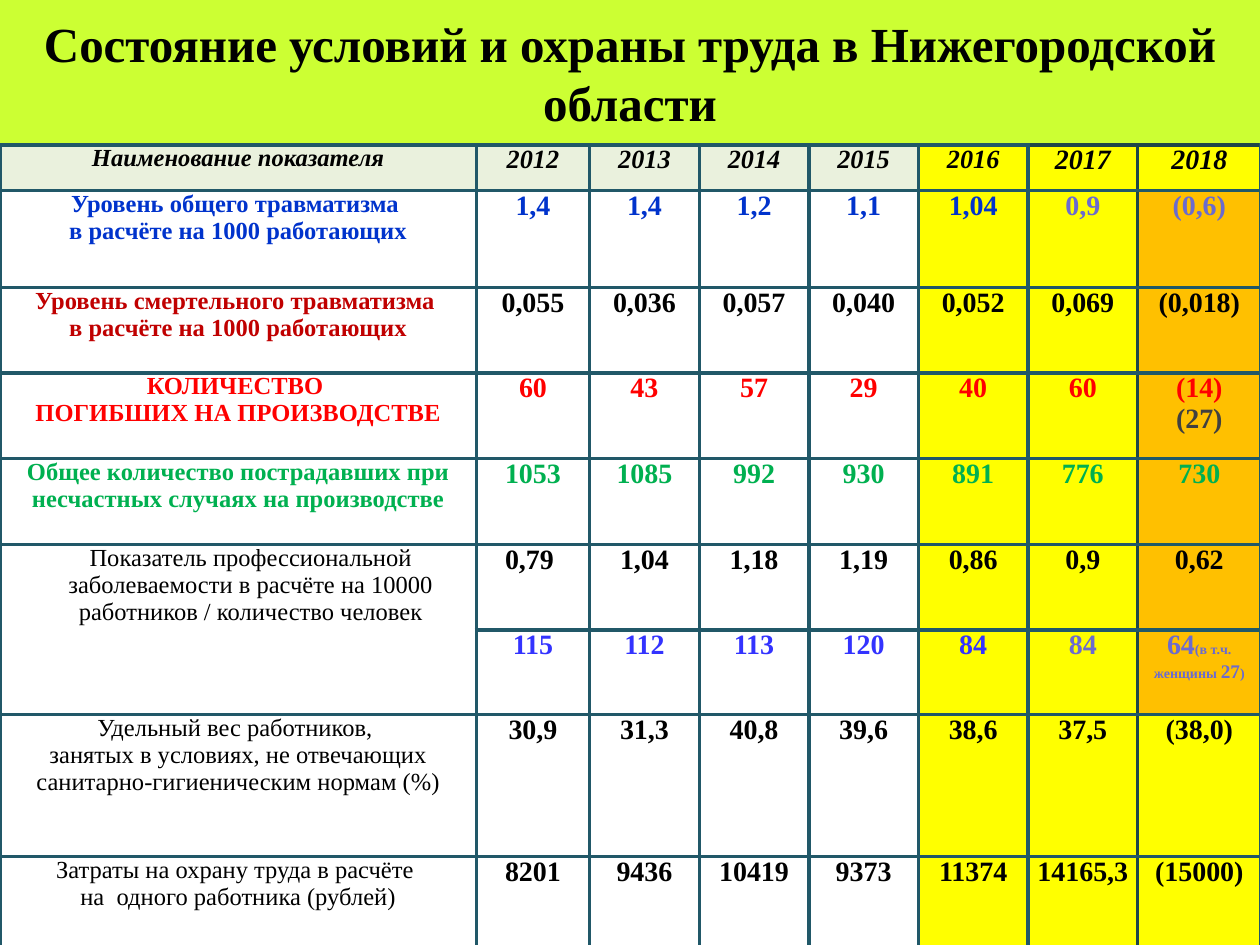
from lxml import etree
from pptx import Presentation
from pptx.dml.color import RGBColor
from pptx.enum.dml import MSO_PATTERN
from pptx.enum.shapes import MSO_SHAPE
from pptx.enum.text import MSO_ANCHOR, PP_ALIGN
from pptx.oxml.ns import qn
from pptx.util import Inches, Pt

FONT = "Times New Roman"
COLORS = {
    "lime": "CCFF33", "black": "000000", "white": "FFFFFF", "navy": "333399",
    "header": "EAF1DD", "yellow": "FFFF00", "orange": "FFC000",
    "border": "215868", "dark border": "1E4649", "blue": "0033CC",
    "violet": "6B6BCF", "crimson": "C00000", "red": "FF0000",
    "gray": "404040", "green": "00B050", "bright blue": "3333FF",
}
COLUMN_WIDTHS = [3.78, 0.9] + [0.87] * 5 + [0.98]
ROW_HEIGHTS = [0.36, 0.77] + [0.68] * 4 + [0.67, 1.13, 0.79]

YEARS = ["2012", "2013", "2014", "2015", "2016", "2017", "2018"]
# Each row: label lines, label colour, label bold, value colour, values
ROWS = [
    (["Уровень общего травматизма ", "в расчёте на 1000 работающих"],
     "blue", True, "blue", ["1,4", "1,4", "1,2", "1,1", "1,04", "0,9", "(0,6)"]),
    (["Уровень смертельного травматизма ", "в расчёте на 1000 работающих"],
     "crimson", True, "black",
     ["0,055", "0,036", "0,057", "0,040", "0,052", "0,069", "(0,018)"]),
    (["КОЛИЧЕСТВО ", "ПОГИБШИХ НА ПРОИЗВОДСТВЕ"],
     "red", True, "red", ["60", "43", "57", "29", "40", "60", "(14)"]),
    (["Общее количество пострадавших при несчастных случаях на производстве"],
     "green", True, "green", ["1053", "1085", "992", "930", "891", "776", "730"]),
    (["Показатель профессиональной заболеваемости в расчёте на 10000 "
      "работников / количество человек"],
     "black", False, "black",
     ["0,79 ", "1,04", "1,18", "1,19", "0,86", "0,9", "0,62"]),
    ([], "black", False, "bright blue",
     ["115", "112", "113", "120", "84", "84", "64"]),
    (["Удельный вес работников, ",
      "занятых в условиях, не отвечающих санитарно-гигиеническим нормам (%)"],
     "black", False, "black",
     ["30,9", "31,3", "40,8", "39,6", "38,6", "37,5", "(38,0)"]),
    (["Затраты на охрану труда в расчёте ", "на  одного работника (рублей)"],
     "black", False, "black",
     ["8201", "9436", "10419", "9373", "11374", "14165,3", "(15000)"]),
]
OCCUPATIONAL_ROW = 5
VIOLET_ROWS = (1, 6)
ORANGE_ROWS = range(1, 7)


def color(name):
    return RGBColor.from_string(COLORS[name])


def add_run(paragraph, text, size, color_name="black", bold=True, italic=False):
    paragraph.alignment = PP_ALIGN.CENTER
    run = paragraph.add_run()
    run.text = text
    run.font.name = FONT
    run.font.size = Pt(size)
    run.font.bold = bold
    run.font.italic = italic
    run.font.color.rgb = color(color_name)


def add_lines(cell, lines, size, color_name, bold=True, italic=False):
    frame = cell.text_frame
    for index, line in enumerate(lines):
        paragraph = frame.add_paragraph() if index else frame.paragraphs[0]
        add_run(paragraph, line, size, color_name, bold, italic)


def set_borders(cell, row, column):
    """Outline a cell; the 2017/2018 divider and its header top are darker."""
    dark_sides = {6: ["R"], 7: ["L"]}.get(column, [])
    if row == 0 and column >= 6:
        dark_sides = dark_sides + ["T"]
    properties = cell._tc.get_or_add_tcPr()
    for side in "LRTB":
        line = etree.SubElement(properties, qn("a:ln" + side), w=str(Pt(2.25)))
        fill = etree.SubElement(line, qn("a:solidFill"))
        name = "dark border" if side in dark_sides else "border"
        etree.SubElement(fill, qn("a:srgbClr"), val=COLORS[name])


def fill_name(row, column):
    if column == 7 and row in ORANGE_ROWS:
        return "orange"
    if column >= 5:
        return "yellow"
    return "white" if row else "header"


def format_cell(cell, row, column):
    cell.margin_left = cell.margin_right = Inches(0.07)
    cell.margin_top = cell.margin_bottom = 0
    set_borders(cell, row, column)
    cell.fill.solid()
    cell.fill.fore_color.rgb = color(fill_name(row, column))


def add_title(slide, left, top, width, height):
    banner = slide.shapes.add_shape(MSO_SHAPE.RECTANGLE, left, top, width, height)
    banner.shadow.inherit = False
    banner.fill.solid()
    banner.fill.fore_color.rgb = color("lime")
    banner.line.fill.background()
    frame = banner.text_frame
    frame.word_wrap = True
    frame.vertical_anchor = MSO_ANCHOR.MIDDLE
    add_run(frame.paragraphs[0],
            "Состояние условий и охраны труда в Нижегородской области", 28)


def add_indicator_table(slide, left, top, width, height):
    table = slide.shapes.add_table(len(ROW_HEIGHTS), len(COLUMN_WIDTHS),
                                   left, top, width, height).table
    for column, size in zip(table.columns, COLUMN_WIDTHS):
        column.width = Inches(size)
    for row, size in zip(table.rows, ROW_HEIGHTS):
        row.height = Inches(size)
    for row in range(len(ROW_HEIGHTS)):
        for column in range(len(COLUMN_WIDTHS)):
            format_cell(table.cell(row, column), row, column)

    # Header
    add_lines(table.cell(0, 0), ["Наименование показателя"], 14, "black", italic=True)
    for column, year in enumerate(YEARS, 1):
        size = 16 if column >= 6 else 15
        add_lines(table.cell(0, column), [year], size, "black", italic=True)

    # Indicators
    for row, (label, label_color, bold, value_color, values) in enumerate(ROWS, 1):
        add_lines(table.cell(row, 0), label, 14, label_color, bold)
        for column, value in enumerate(values, 1):
            violet = row in VIOLET_ROWS and column >= 6
            add_lines(table.cell(row, column), [value], 16,
                      "violet" if violet else value_color)

    # Additional figures for 2018
    add_run(table.cell(3, 7).text_frame.add_paragraph(), "(27)", 16, "gray")
    women = table.cell(6, 7).text_frame.paragraphs[0]
    for text, size in [("(в т.ч. женщины ", 8), ("27", 11), (")", 8)]:
        add_run(women, text, size, "violet")

    # Occupational illness label spans two rows
    label_cell = table.cell(OCCUPATIONAL_ROW, 0)
    label_cell.merge(table.cell(OCCUPATIONAL_ROW + 1, 0))
    paragraph = label_cell.text_frame.paragraphs[0]
    paragraph.space_after = Pt(6)
    paragraph._p.get_or_add_pPr().set("marL", str(Inches(0.2)))


def main():
    presentation = Presentation()
    presentation.slide_width = Inches(10)
    presentation.slide_height = Inches(7.5)
    slide = presentation.slides.add_slide(presentation.slide_layouts[6])
    background = slide.background.fill
    background.patterned()
    background.pattern = MSO_PATTERN.PERCENT_90
    background.fore_color.rgb = color("white")
    background.back_color.rgb = color("navy")
    add_title(slide, 0, 0, Inches(10), Inches(1.15))
    add_indicator_table(slide, 0, Inches(1.15), Inches(10), Inches(6.5))
    presentation.save("out.pptx")


if __name__ == "__main__":
    main()
